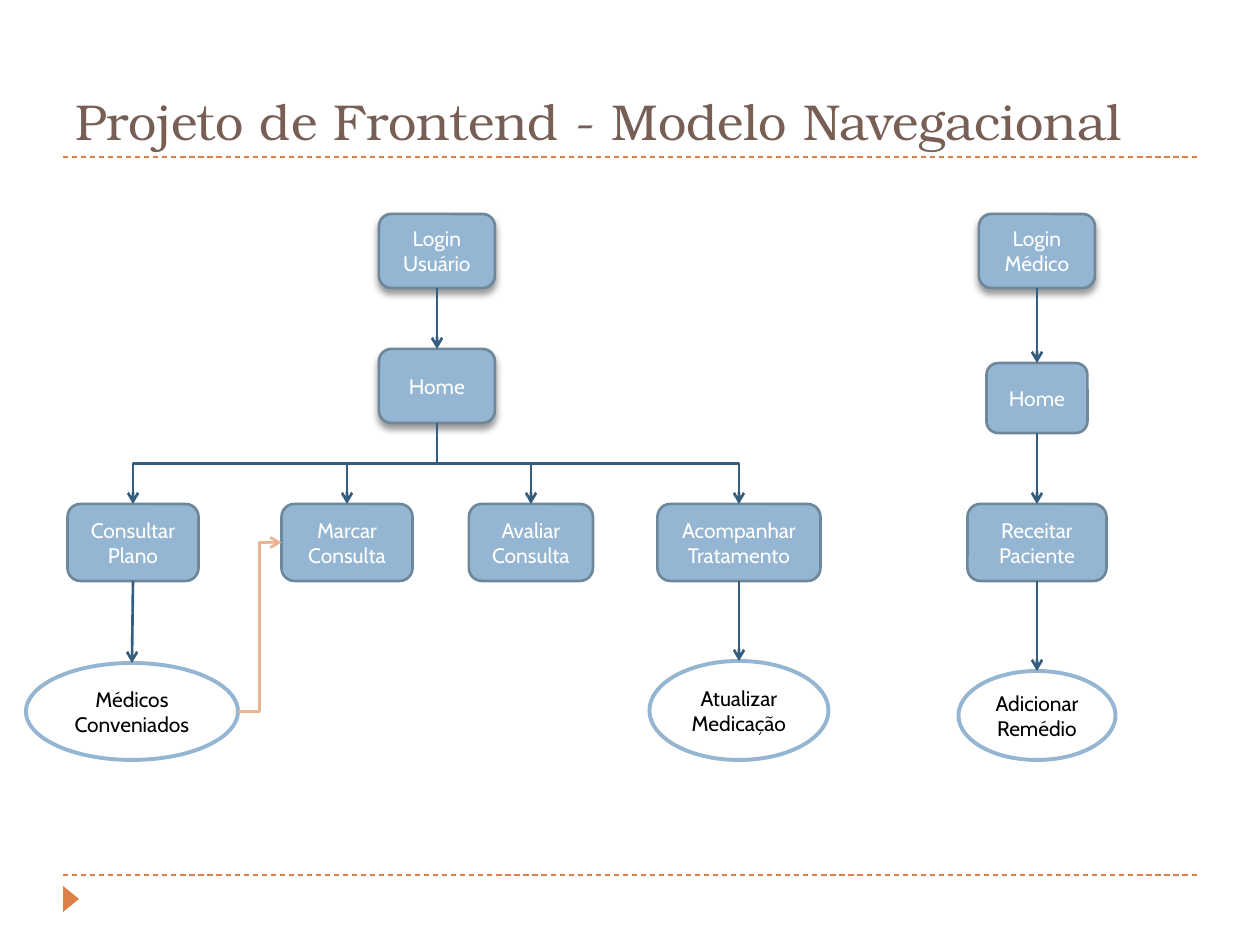
from dataclasses import dataclass

from lxml import etree
from pptx import Presentation
from pptx import util as u
from pptx.dml.color import RGBColor
from pptx.enum import dml, shapes, text
from pptx.oxml.ns import qn


@dataclass(frozen=True)
class Theme:
    title_font: str = "TeX Gyre Bonum"
    body_font: str = "Cabin"
    title_size: float = 28.8
    body_size: float = 12
    title: str = "775F55"
    accent: str = "DD8047"
    page: str = "94B6D2"
    page_edge: str = "6D879B"
    white: str = "FFFFFF"
    black: str = "000000"
    flow: str = "355D7E"
    return_flow: str = "EBB391"


THEME = Theme()
PX_PER_INCH = 126
ROW_TOP, ROW_HEIGHT = 504, 77
TOP, LEFT, BOTTOM = 0, 1, 2  # connection sites of a rounded rectangle
ELLIPSE_BOTTOM = 4


def px(length):
    return u.Emu(round(length * u.Inches(1) / PX_PER_INCH))


def rgb(value):
    return RGBColor.from_string(value)


def style_line(line, color, width, dashed=False):
    line.color.rgb = rgb(color)
    line.width = u.Pt(width)
    if dashed:
        line.dash_style = dml.MSO_LINE.DASH


def style_text(frame, words, font, size, color, align, anchor):
    frame.word_wrap = True
    frame.vertical_anchor = anchor
    frame.text = words
    paragraph = frame.paragraphs[0]
    paragraph.alignment = align
    run_font = paragraph.runs[0].font
    run_font.name, run_font.size = font, u.Pt(size)
    run_font.color.rgb = rgb(color)


def add_shadow(shape):
    effects = shape._element.spPr.find(qn("a:effectLst"))
    shadow = etree.SubElement(effects, qn("a:outerShdw"), blurRad=str(u.Pt(4)),
                              dist=str(u.Pt(3)), dir="5400000", rotWithShape="0")
    color = etree.SubElement(shadow, qn("a:srgbClr"), val=THEME.black)
    etree.SubElement(color, qn("a:alpha"), val="40000")


def add_node(slide, kind, words, center, top, width, height, fill, edge, edge_width, color):
    node = slide.shapes.add_shape(kind, px(center - width / 2), px(top), px(width), px(height))
    node.shadow.inherit = False
    node.fill.solid()
    node.fill.fore_color.rgb = rgb(fill)
    style_line(node.line, edge, edge_width)
    frame = node.text_frame
    frame.margin_left = frame.margin_right = px(8)
    style_text(frame, words, THEME.body_font, THEME.body_size, color,
               text.PP_ALIGN.CENTER, text.MSO_ANCHOR.MIDDLE)
    return node


def add_page(slide, words, center, top, width, height, raised=False):
    page = add_node(slide, shapes.MSO_SHAPE.ROUNDED_RECTANGLE, words, center, top, width, height,
                    THEME.page, THEME.page_edge, 1.5, THEME.white)
    if raised:
        add_shadow(page)
    return page


def add_action(slide, words, center, top, width, height):
    return add_node(slide, shapes.MSO_SHAPE.OVAL, words, center, top, width, height,
                    THEME.white, THEME.page, 2.25, THEME.black)


def add_line(slide, kind, start, end, color, width, dashed=False, arrow=False):
    line = slide.shapes.add_connector(kind, *start, *end)
    style_line(line.line, color, width, dashed)
    properties = line._element.spPr
    if arrow:
        etree.SubElement(properties.find(qn("a:ln")), qn("a:tailEnd"), type="arrow")
    etree.SubElement(properties, qn("a:effectLst"))
    return line


def add_rule(slide, y):
    add_line(slide, shapes.MSO_CONNECTOR.STRAIGHT, (px(63), px(y)), (px(1197), px(y)),
             THEME.accent, 0.75, dashed=True)


def bottom_of(node):
    return node.left + node.width // 2, node.top + node.height


def top_of(node):
    return node.left + node.width // 2, node.top


def add_arrow(slide, source, target):
    arrow = add_line(slide, shapes.MSO_CONNECTOR.STRAIGHT, bottom_of(source), top_of(target),
                     THEME.flow, 1.5, arrow=True)
    arrow.begin_connect(source, BOTTOM)
    arrow.end_connect(target, TOP)


def add_branch(slide, source, target):
    """Elbow that leaves downwards: the frame is turned a quarter about its centre."""
    (x1, y1), (x2, y2) = bottom_of(source), top_of(target)
    branch = add_line(slide, shapes.MSO_CONNECTOR.ELBOW, (x1, y1), (x2, y2),
                      THEME.flow, 1.5, arrow=True)
    branch.begin_connect(source, BOTTOM)
    branch.end_connect(target, TOP)
    run, drop = abs(x2 - x1), y2 - y1
    branch.left, branch.top = (x1 + x2 - drop) // 2, (y1 + y2 - run) // 2
    branch.width, branch.height = drop, run
    frame = branch._element.spPr.find(qn("a:xfrm"))
    rightwards = x2 > x1
    frame.set("rot", "16200000" if rightwards else "5400000")
    frame.set("flipH", "1" if rightwards else "0")


def add_return(slide, source, target):
    start = source.left + source.width, source.top + source.height // 2
    end = target.left, target.top + target.height // 2
    link = add_line(slide, shapes.MSO_CONNECTOR.ELBOW, start, end,
                    THEME.return_flow, 1.5, arrow=True)
    link.end_connect(target, LEFT)


def add_frame(slide):
    # Title, rules and corner marker
    title = slide.shapes.add_textbox(px(63), px(21), px(1134), px(136))
    style_text(title.text_frame, "Projeto de Frontend - Modelo Navegacional", THEME.title_font,
               THEME.title_size, THEME.title, text.PP_ALIGN.LEFT, text.MSO_ANCHOR.BOTTOM)
    for y in (157, 875):
        add_rule(slide, y)
    marker = slide.shapes.add_shape(shapes.MSO_SHAPE.ISOSCELES_TRIANGLE,
                                    px(58), px(891), px(26), px(16))
    marker.rotation = 90
    marker.shadow.inherit = False
    marker.fill.solid()
    marker.fill.fore_color.rgb = rgb(THEME.accent)
    marker.line.fill.background()


def add_user_flow(slide):
    login = add_page(slide, "Login Usuário", 437, 214, 116, 74, raised=True)
    home = add_page(slide, "Home", 437, 349, 116, 74, raised=True)
    plan, booking, review, treatment = [
        add_page(slide, words, center, ROW_TOP, width, ROW_HEIGHT)
        for words, center, width in (
            ("Consultar Plano", 133, 131),
            ("Marcar Consulta", 347, 131),
            ("Avaliar Consulta", 531, 124),
            ("Acompanhar Tratamento", 739, 163),
        )
    ]
    doctors = add_action(slide, "Médicos Conveniados", 132, 663, 212, 97)
    medication = add_action(slide, "Atualizar Medicação", 739, 661, 179, 99)

    add_arrow(slide, login, home)
    for page in (plan, booking, review, treatment):
        add_branch(slide, home, page)
    add_arrow(slide, plan, doctors)
    add_arrow(slide, treatment, medication)
    add_return(slide, doctors, booking)


def add_doctor_flow(slide):
    center = 1037
    steps = [
        add_page(slide, "Login Médico", center, 214, 116, 74, raised=True),
        add_page(slide, "Home", center, 363, 101, 70),
        add_page(slide, "Receitar Paciente", center, ROW_TOP, 139, ROW_HEIGHT),
        add_action(slide, "Adicionar Remédio", center, 671, 157, 89),
    ]
    for source, target in zip(steps, steps[1:]):
        add_arrow(slide, source, target)


def main():
    deck = Presentation()
    deck.slide_width, deck.slide_height = px(1260), px(945)
    slide = deck.slides.add_slide(deck.slide_layouts[6])
    add_frame(slide)
    add_user_flow(slide)
    add_doctor_flow(slide)
    deck.save("out.pptx")


if __name__ == "__main__":
    main()
